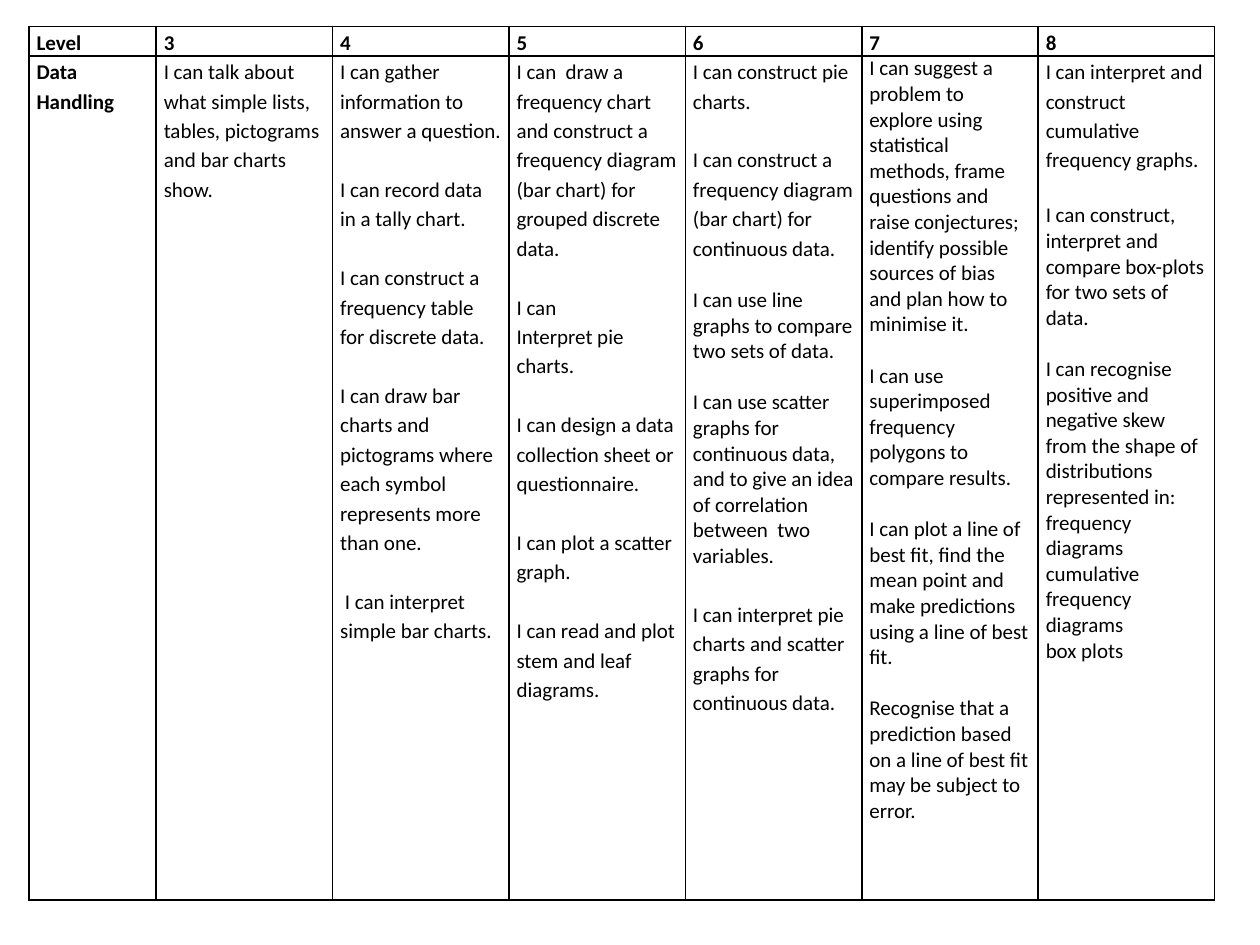
"""Build a one-slide table of data handling targets by level."""
from dataclasses import dataclass

from lxml import etree
from pptx import Presentation
from pptx.dml.color import RGBColor
from pptx.enum.text import MSO_ANCHOR, PP_ALIGN
from pptx.oxml.ns import qn
from pptx.util import Inches, Pt

LEFT, TOP = PP_ALIGN.LEFT, MSO_ANCHOR.TOP
LOOSE, TIGHT, NONE = 1.15, 1.0, 0


@dataclass(frozen=True)
class Theme:
    """Fonts, colours and sizes of the slide."""
    font: str = "Calibri"
    ink: str = "000000"
    size: float = 12
    line_height: float = 14.65
    border: float = 1
    inset: float = 0.06


def spaced(*texts, line=LOOSE):
    """Return paragraphs parted by a gap of one line."""
    return [(text, line, line if i else NONE) for i, text in enumerate(texts)]


HEADERS = ["Level", "3", "4", "5", "6", "7", "8"]
TARGETS = [
    spaced("Data Handling"),
    spaced("I can talk about what simple lists, tables, pictograms and bar charts show."),
    spaced(
        "I can gather information to answer a question.",
        "I can record data in a tally chart.",
        "I can construct a frequency table for discrete data.",
        "I can draw bar charts and pictograms where each symbol represents more than one.",
        " I can interpret simple bar charts.",
    ),
    [
        *spaced(
            "I can  draw a frequency chart and construct a frequency diagram "
            "(bar chart) for grouped discrete data.",
            "I can",
        ),
        ("Interpret pie charts.", LOOSE, NONE),
        ("I can design a data collection sheet or questionnaire.", LOOSE, LOOSE),
        ("I can plot a scatter graph.", LOOSE, LOOSE),
        ("I can read and plot stem and leaf diagrams.", LOOSE, LOOSE),
    ],
    [
        *spaced(
            "I can construct pie charts.",
            "I can construct a frequency diagram (bar chart) for continuous data.",
        ),
        ("I can use line graphs to compare two sets of data.", TIGHT, TIGHT),
        ("I can use scatter graphs for continuous data, and to give an idea of "
         "correlation between  two variables.", TIGHT, TIGHT),
        ("I can interpret pie charts and scatter graphs for continuous data.", LOOSE, LOOSE),
    ],
    [
        ("I can suggest a problem to explore using statistical methods, frame questions "
         "and raise conjectures; identify possible", TIGHT, NONE),
        ("sources of bias and plan how to minimise it.", TIGHT, NONE),
        ("I can use superimposed frequency polygons to compare results.", TIGHT, TIGHT),
        ("I can plot a line of best fit, find the mean point and make predictions "
         "using a line of best fit.", TIGHT, TIGHT),
        ("Recognise that a prediction based on a line of best fit may be subject to error.",
         TIGHT, TIGHT),
    ],
    [
        ("I can interpret and construct cumulative frequency graphs.", LOOSE, NONE),
        ("I can construct, interpret and compare box-plots for two sets of data.", TIGHT, LOOSE),
        ("I can recognise positive and negative skew from the shape of distributions "
         "represented in:", TIGHT, TIGHT),
        ("frequency diagrams", TIGHT, NONE),
        ("cumulative frequency diagrams", TIGHT, NONE),
        ("box plots", TIGHT, NONE),
    ],
]


class SlideBuilder:
    """Hold the theme and the current slide."""

    def __init__(self, slide, theme):
        self.s = slide
        self.theme = theme

    def add_borders(self, cell):
        """Draw a solid line on each side of a cell."""
        tc_pr = cell._tc.get_or_add_tcPr()
        for side in ("lnL", "lnR", "lnT", "lnB"):
            ln = etree.SubElement(tc_pr, qn(f"a:{side}"), w=str(Pt(self.theme.border)))
            fill = etree.SubElement(ln, qn("a:solidFill"))
            etree.SubElement(fill, qn("a:srgbClr"), val=self.theme.ink)

    def add_paragraph(self, p, text, line, gap, bold):
        """Write one styled paragraph."""
        layout = {
            "alignment": LEFT,
            "line_spacing": line,
            "space_before": Pt(gap * self.theme.line_height),
        }
        for name, value in layout.items():
            setattr(p, name, value)
        r = p.add_run()
        r.text = text
        style = {"name": self.theme.font, "size": Pt(self.theme.size), "bold": bold}
        for name, value in style.items():
            setattr(r.font, name, value)
        r.font.color.rgb = RGBColor.from_string(self.theme.ink)

    def fill_cell(self, cell, paragraphs, bold):
        """Style a cell and write its paragraphs."""
        inset = Inches(self.theme.inset)
        layout = {
            "margin_left": inset, "margin_right": inset,
            "margin_top": 0, "margin_bottom": 0, "vertical_anchor": TOP,
        }
        for name, value in layout.items():
            setattr(cell, name, value)
        self.add_borders(cell)
        cell.fill.background()
        tf = cell.text_frame
        for i, paragraph in enumerate(paragraphs):
            p = tf.add_paragraph() if i else tf.paragraphs[0]
            self.add_paragraph(p, *paragraph, bold)

    def add_table(self, left, top, widths, heights, rows):
        """Add a bordered table with a bold first row and column."""
        table = self.s.shapes.add_table(
            len(heights), len(widths), Inches(left), Inches(top),
            Inches(sum(widths)), Inches(sum(heights)),
        ).table
        table.first_row = table.horz_banding = False
        for column, width in zip(table.columns, widths):
            column.width = Inches(width)
        for row, height in zip(table.rows, heights):
            row.height = Inches(height)
        for i, row in enumerate(rows):
            for j, paragraphs in enumerate(row):
                self.fill_cell(table.cell(i, j), paragraphs, bold=i == 0 or j == 0)


def main():
    """Build and save the presentation."""
    prs = Presentation()
    prs.slide_width, prs.slide_height = Inches(10), Inches(7.5)
    builder = SlideBuilder(prs.slides.add_slide(prs.slide_layouts[6]), Theme())
    header_row = [spaced(header) for header in HEADERS]
    builder.add_table(0.23, 0.21, [1.01] + [1.4] * 6, [0.23, 6.7], [header_row, TARGETS])
    prs.save("out.pptx")


if __name__ == "__main__":
    main()
